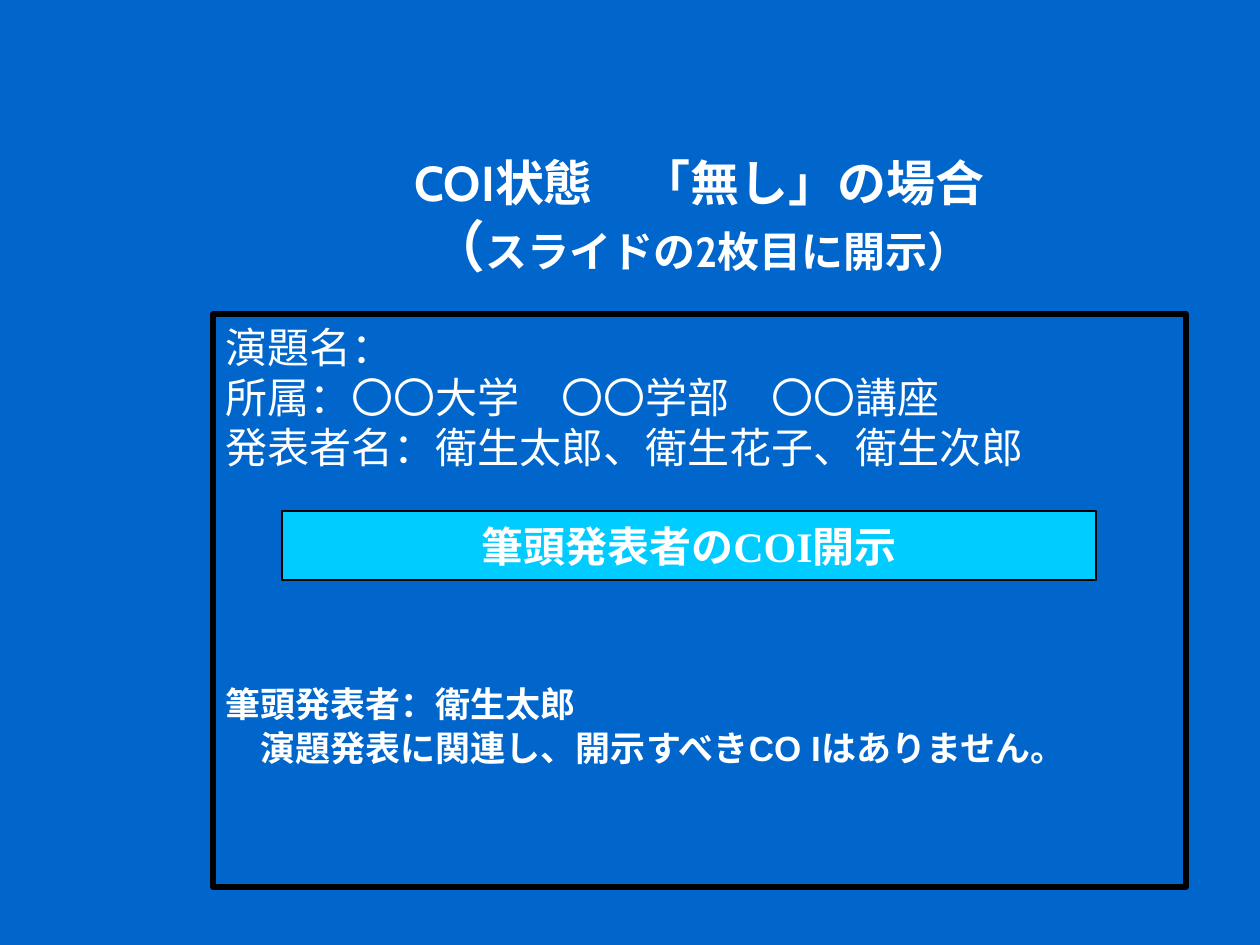
from pptx import Presentation
from pptx.dml.color import RGBColor
from pptx.enum.shapes import MSO_SHAPE as Shape
from pptx.enum.text import MSO_ANCHOR as Anchor, PP_ALIGN as Align
from pptx.util import Emu, Pt

PX = 914400 // 126
BLUE = RGBColor(0x00, 0x66, 0xCC)
CYAN = RGBColor(0x00, 0xCC, 0xFF)
WHITE = RGBColor(0xFF, 0xFF, 0xFF)
BLACK = RGBColor(0x00, 0x00, 0x00)


class SlideBuilder:
    def __init__(self, slide):
        self.slide = slide

    def background(self, color):
        fill = self.slide.background.fill
        fill.solid()
        fill.fore_color.rgb = color

    def box(self, bounds, line_width, fill=None):
        shape = self.slide.shapes.add_shape(
            Shape.RECTANGLE, *(Emu(value * PX) for value in bounds))
        shape.shadow.inherit = False
        if fill is None:
            shape.fill.background()
        else:
            shape.fill.solid()
            shape.fill.fore_color.rgb = fill
        shape.line.color.rgb = BLACK
        shape.line.width = Pt(line_width)
        return shape

    def text_box(self, bounds):
        return self.slide.shapes.add_textbox(
            *(Emu(value * PX) for value in bounds))

    def set_text(self, shape, text, size, font="Arial", bold=False,
                 align=Align.LEFT, anchor=Anchor.TOP):
        frame = shape.text_frame
        frame.word_wrap = True
        frame.vertical_anchor = anchor
        frame.text = text
        for paragraph in frame.paragraphs:
            paragraph.alignment = align
            for run in paragraph.runs:
                self.style(run, size, font, bold)
        return frame.paragraphs

    def style(self, run, size, font, bold):
        run.font.size = Pt(size)
        run.font.name = font
        run.font.bold = bold
        run.font.color.rgb = WHITE


def main():
    presentation = Presentation()
    presentation.slide_width = Emu(1260 * PX)
    presentation.slide_height = Emu(945 * PX)
    builder = SlideBuilder(
        presentation.slides.add_slide(presentation.slide_layouts[6]))
    builder.background(BLUE)

    # Title: the second line opens with a larger bracket
    title = builder.text_box((243, 169, 913, 116))
    heading = builder.set_text(title, "COI状態　「無し」の場合\v（", 28, "Cabin", True,
                               Align.CENTER, Anchor.BOTTOM)[0]
    heading.runs[-1].font.size = Pt(32)
    subtitle = heading.add_run()
    subtitle.text = "スライドの2枚目に開示）"
    builder.style(subtitle, 24, "Cabin", True)

    # Frame and presentation details
    builder.box((213, 314, 973, 573), 3)
    details = builder.text_box((213, 315, 953, 165))
    builder.set_text(details, "演題名：\n所属：〇〇大学　〇〇学部　〇〇講座\n"
                     "発表者名：衛生太郎、衛生花子、衛生次郎", 24)

    # Disclosure banner
    banner = builder.box((282, 511, 814, 69), 1, CYAN)
    builder.set_text(banner, "筆頭発表者のCOI開示", 24, "Times New Roman", True,
                     Align.CENTER, Anchor.MIDDLE)

    # Disclosure statement
    statement = builder.text_box((213, 684, 973, 233))
    lines = builder.set_text(statement, "筆頭発表者：衛生太郎\n"
                             "　演題発表に関連し、開示すべきCO Iはありません。", 20, bold=True)
    for line in lines:
        line.line_spacing = 0.8
    lines[1].space_before = Pt(6)

    presentation.save("out.pptx")


if __name__ == "__main__":
    main()
